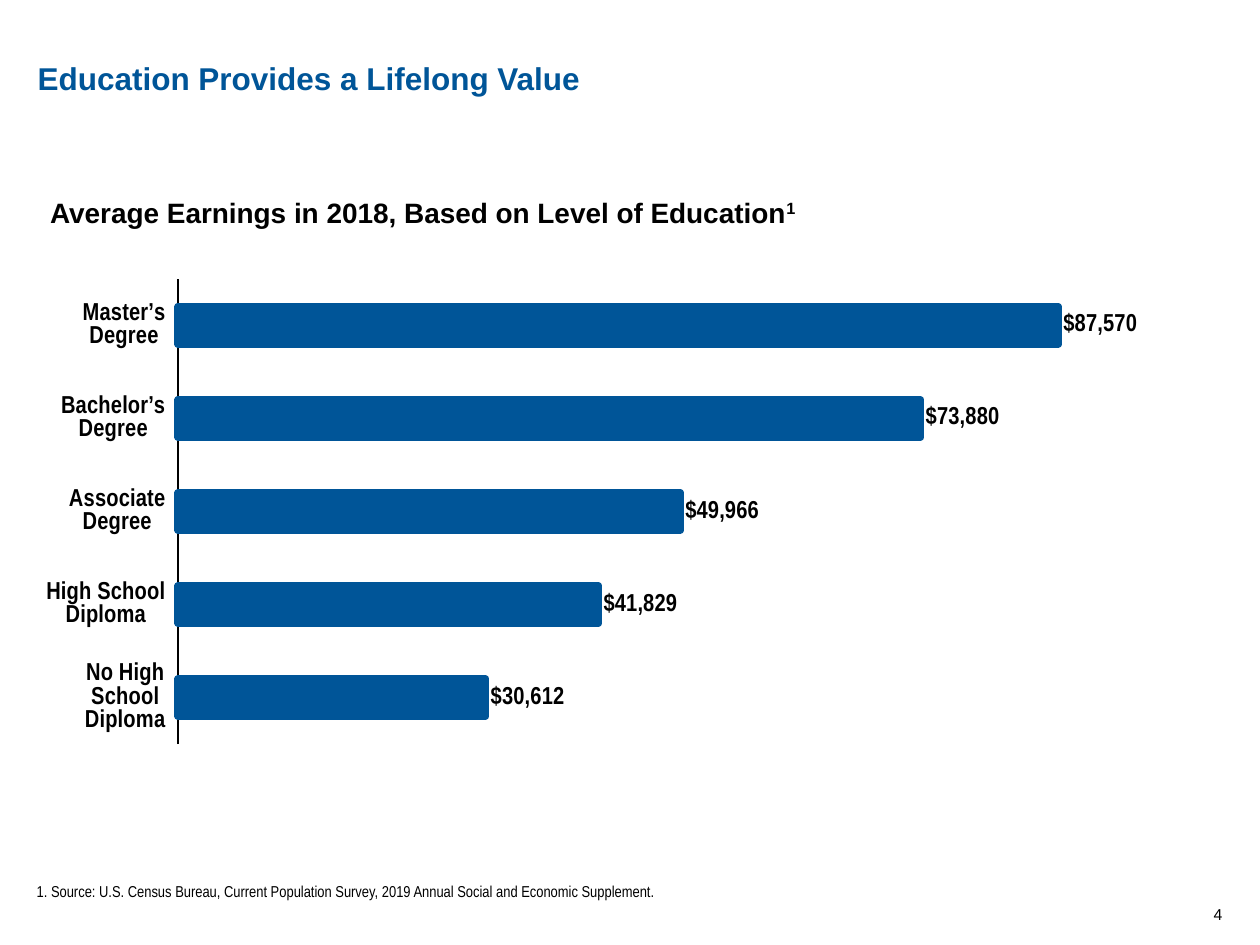
from dataclasses import dataclass

from lxml import etree
from pptx import Presentation
from pptx.chart.data import CategoryChartData
from pptx.dml.color import RGBColor
from pptx.enum.chart import XL_CHART_TYPE, XL_LABEL_POSITION, XL_TICK_LABEL_POSITION, XL_TICK_MARK
from pptx.enum.text import MSO_ANCHOR, PP_ALIGN
from pptx.oxml.ns import qn
from pptx.util import Cm, Pt

BAR = XL_CHART_TYPE.BAR_CLUSTERED
OUTSIDE_END = XL_LABEL_POSITION.OUTSIDE_END
LABELS_LOW = XL_TICK_LABEL_POSITION.LOW
NO_TICK = XL_TICK_MARK.NONE
TOP, BOTTOM = MSO_ANCHOR.TOP, MSO_ANCHOR.BOTTOM
LEFT, RIGHT = PP_ALIGN.LEFT, PP_ALIGN.RIGHT

EARNINGS = {
    "No High School\nDiploma": 30612,
    "High School\nDiploma": 41829,
    "Associate\nDegree": 49966,
    "Bachelor’s\nDegree": 73880,
    "Master’s\nDegree": 87570,
}
DOLLARS = '"$"#,##0'
PLOT_AREA = {"x": 0.12, "y": 0.04, "w": 0.86, "h": 0.81}


@dataclass(frozen=True)
class Theme:
    blue: RGBColor = RGBColor(0x00, 0x55, 0x98)
    black: RGBColor = RGBColor(0, 0, 0)
    font: str = "Arial"
    narrow: str = "Arial Narrow"
    title: Pt = Pt(18)
    heading: Pt = Pt(16)
    label: Pt = Pt(14)
    small: Pt = Pt(9)


class SlideBuilder:
    """Adds styled text and charts to one slide."""

    def __init__(self, slide, theme):
        self.slide = slide
        self.theme = theme

    def style(self, font, size, color, name, bold):
        font.size, font.name, font.bold = size, name, bold
        font.color.rgb = color

    def text(self, words, box, size, color=None, name=None, bold=False,
             align=LEFT, anchor=TOP, inset=(0, 0), superscript=None):
        frame = self.slide.shapes.add_textbox(*map(Cm, box)).text_frame
        frame.word_wrap = True
        frame.vertical_anchor = anchor
        frame.margin_left = frame.margin_right = Cm(inset[0])
        frame.margin_top = frame.margin_bottom = Cm(inset[1])
        frame.text = words
        paragraph = frame.paragraphs[0]
        paragraph.alignment = align
        if superscript:
            raised = paragraph.add_run()
            raised.text = superscript
            raised.font._element.set("baseline", "30000")
        for run in paragraph.runs:
            self.style(run.font, size, color or self.theme.black,
                       name or self.theme.font, bold)

    def bar_chart(self, values, box, maximum, step):
        data = CategoryChartData(number_format=DOLLARS)
        data.categories = list(values)
        data.add_series("Series 1", list(values.values()))
        chart = self.slide.shapes.add_chart(BAR, *map(Cm, box), data).chart
        chart.has_title = chart.has_legend = False
        self.style(chart.font, self.theme.label, self.theme.black, self.theme.narrow, True)
        self.axes(chart, maximum, step)
        self.bars(chart.plots[0])
        self.place_plot(chart)

    def axes(self, chart, maximum, step):
        levels, amounts = chart.category_axis, chart.value_axis
        levels.major_tick_mark = levels.minor_tick_mark = NO_TICK
        levels.tick_label_position = LABELS_LOW
        levels.format.line.color.rgb = self.theme.black
        levels.format.line.width = Pt(1)
        amounts.minimum_scale, amounts.maximum_scale = 0, maximum
        amounts.major_unit = step
        amounts.has_major_gridlines = False
        amounts.visible = False

    def bars(self, plot):
        plot.gap_width = 150
        plot.vary_by_categories = False
        series = plot.series[0]
        series.format.fill.solid()
        series.format.fill.fore_color.rgb = self.theme.blue
        series.format.line.color.rgb = self.theme.blue
        series.format.line.width = Pt(4)
        etree.SubElement(series._element.find(".//" + qn("a:ln")), qn("a:round"))
        labels = series.data_labels
        labels.show_value = True
        labels.position = OUTSIDE_END
        labels.number_format = DOLLARS
        labels.number_format_is_linked = False
        self.style(labels.font, self.theme.label, self.theme.black, self.theme.narrow, True)

    def place_plot(self, chart):
        area = chart._chartSpace.find(".//" + qn("c:plotArea"))
        for old in area.findall(qn("c:layout")):
            area.remove(old)
        layout = etree.Element(qn("c:layout"))
        manual = etree.SubElement(layout, qn("c:manualLayout"))
        settings = {"layoutTarget": "inner", "xMode": "edge", "yMode": "edge", **PLOT_AREA}
        for tag, value in settings.items():
            etree.SubElement(manual, qn("c:" + tag)).set("val", str(value))
        area.insert(0, layout)


def main():
    theme = Theme()
    deck = Presentation()
    deck.slide_width, deck.slide_height = Cm(25.4), Cm(19.05)
    page = SlideBuilder(deck.slides.add_slide(deck.slide_layouts[6]), theme)
    page.text("4", (23.62, 18.16, 1.02, 0.46), theme.small, align=RIGHT, anchor=BOTTOM)
    page.text("1. Source: U.S. Census Bureau, Current Population Survey, "
              "2019 Annual Social and Economic Supplement.",
              (0.74, 17.78, 23.62, 0.38), theme.small, name=theme.narrow, anchor=BOTTOM)
    page.text("Education Provides a Lifelong Value", (0.76, 1.19, 17.78, 1.78),
              theme.title, color=theme.blue, bold=True)
    page.bar_chart(EARNINGS, (0.76, 5.16, 23.57, 11.58), maximum=100000, step=20000)
    page.text("Average Earnings in 2018, Based on Level of Education",
              (0.76, 3.81, 21.59, 1.52), theme.heading, bold=True,
              inset=(0.25, 0.13), superscript="1")
    deck.save("out.pptx")


if __name__ == "__main__":
    main()
